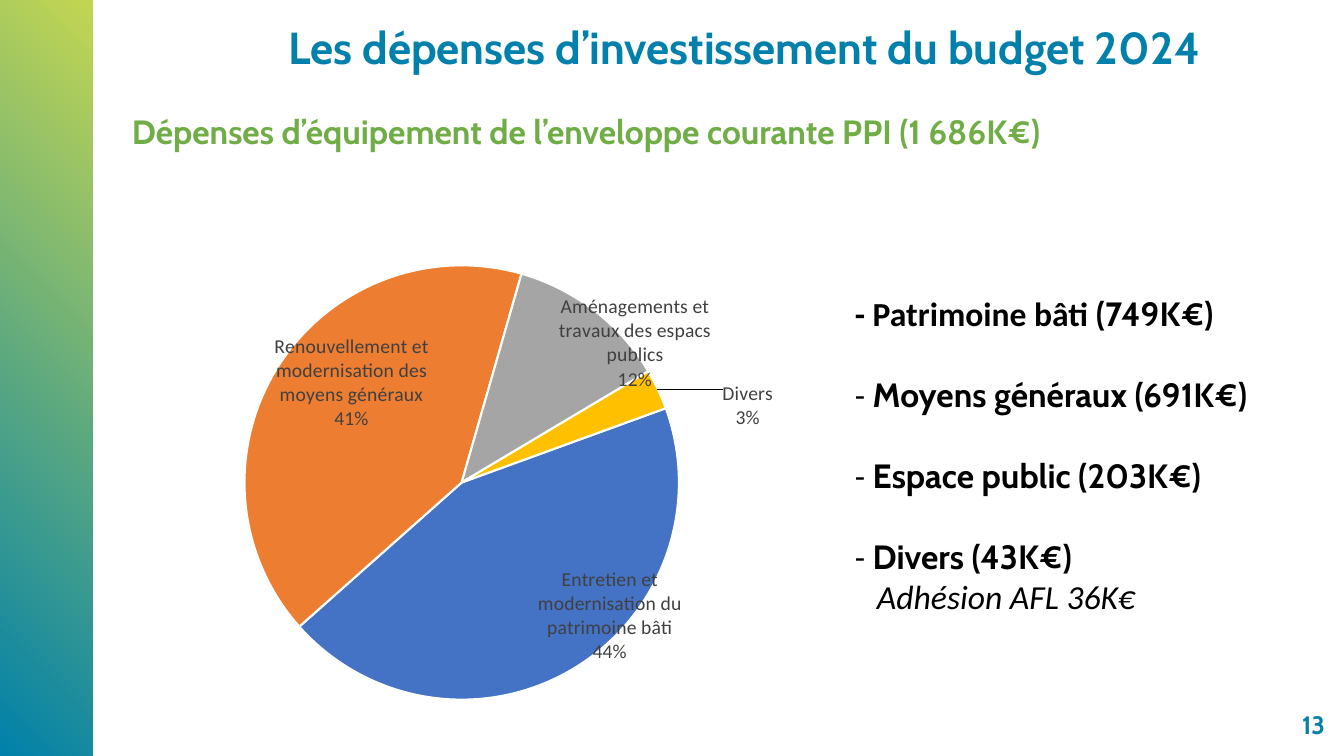
import copy
import pptx
import pptx.chart.data
import pptx.dml.color
import pptx.enum.chart
import pptx.enum.shapes
import pptx.enum.text
import pptx.oxml
import pptx.util
from pptx.util import Inches

BLUE = "0080AA"
GREEN = "70AD47"
BLACK = "000000"
CHART_XMLNS = 'xmlns:c="http://schemas.openxmlformats.org/drawingml/2006/chart"'
# name, share, colour, label shift (x, y) and label size (w, h) in parts of the chart
SLICES = [
    ("Entretien et modernisation du patrimoine bâti", 44, "4472C4", (0.13, 0), (0.16, 0.24)),
    ("Renouvellement et modernisation des moyens généraux", 41, "ED7D31",
     (-0.01, -0.07), (0.16, 0.28)),
    ("Aménagements et travaux des espacs publics", 12, "A5A5A5", (0.14, -0.04), (0.16, 0.19)),
    ("Divers", 3, "FFC000", (0.14, -0.02), (0.09, 0.1)),
]
AMOUNTS = ["Moyens généraux (691K€)", "Espace public (203K€)", "Divers (43K€)"]


def color(hex_value):
    return pptx.dml.color.RGBColor.from_string(hex_value)


def style_font(font, size, hex_value, name, bold=False, italic=False):
    font.size = pptx.util.Pt(size)
    font.color.rgb = color(hex_value)
    font.name = name
    font.bold = bold
    font.italic = italic


def add_run(para, text, size=24, hex_value=BLACK, name="Cabin", bold=True, italic=False):
    span = para.add_run()
    span.text = text
    style_font(span.font, size, hex_value, name, bold, italic)


def add_box(page, left, top, width, height, anchor=pptx.enum.text.MSO_ANCHOR.TOP):
    box = page.shapes.add_textbox(Inches(left), Inches(top), Inches(width), Inches(height))
    box.text_frame.word_wrap = True
    box.text_frame.vertical_anchor = anchor
    return box.text_frame


def add_side_band(page):
    band = page.shapes.add_shape(
        pptx.enum.shapes.MSO_SHAPE.RECTANGLE, 0, 0, Inches(0.92), Inches(7.5))
    band.shadow.inherit = False
    band.line.fill.background()
    band.fill.gradient()
    band.fill.gradient_angle = 45
    for stop, hex_value in zip(band.fill.gradient_stops, (BLUE, "C3D652")):
        stop.color.rgb = color(hex_value)


def add_headings(page):
    middle = pptx.enum.text.MSO_ANCHOR.MIDDLE
    title = add_box(page, 1.74, 0.21, 11.29, 0.58, middle).paragraphs[0]
    title.alignment = pptx.enum.text.PP_ALIGN.CENTER
    title.line_spacing = 0.9
    add_run(title, "Les dépenses d’investissement du budget 2024", 32, BLUE)

    subtitle = add_box(page, 1.21, 1.05, 9.87, 0.5).paragraphs[0]
    add_run(subtitle, "Dépenses d’équipement de l’enveloppe courante PPI (1 686K€)", 24, GREEN)

    number = add_box(page, 9.52, 6.98, 3.72, 0.41, middle).paragraphs[0]
    number.alignment = pptx.enum.text.PP_ALIGN.RIGHT
    add_run(number, "13", 18, BLUE)


def add_amounts(page):
    frame = add_box(page, 8.38, 2.86, 4.9, 3.74)
    para = frame.paragraphs[0]
    add_run(para, "- Patrimoine bâti ", name="Calibri")
    add_run(para, "(749K€)")
    for amount in AMOUNTS:
        para = frame.add_paragraph()
        para.space_before = pptx.util.Pt(29)
        add_run(para, "- ", name="Calibri", bold=False)
        add_run(para, amount)
    detail = frame.add_paragraph()
    detail._p.get_or_add_pPr().set("marL", str(Inches(0.22)))
    add_run(detail, "Adhésion AFL 36K€", name="Calibri", bold=False, italic=True)


def set_plot_area(chart, left, top, width, height):
    """Place the inner plot area, in fractions of the chart frame."""
    plot_area = chart._chartSpace.chart.plotArea
    for old in plot_area.xpath("c:layout"):
        plot_area.remove(old)
    places = "".join(
        f'<c:{tag} val="{value}"/>'
        for tag, value in (("x", left), ("y", top), ("w", width), ("h", height)))
    plot_area.insert(0, pptx.oxml.parse_xml(
        f'<c:layout {CHART_XMLNS}><c:manualLayout><c:layoutTarget val="inner"/>'
        '<c:xMode val="edge"/><c:yMode val="edge"/>'
        f'{places}</c:manualLayout></c:layout>'))


def set_start_angle(plot, degrees):
    pie = plot._element
    for old in pie.xpath("c:firstSliceAng"):
        pie.remove(old)
    pie.append(pptx.oxml.parse_xml(f'<c:firstSliceAng {CHART_XMLNS} val="{degrees}"/>'))


def slice_label(index, shift, size, text_style):
    """Build the label of one slice, moved by shift and wrapped to size."""
    label = pptx.oxml.parse_xml(
        f'<c:dLbl {CHART_XMLNS}><c:idx val="{index}"/>'
        f'<c:layout><c:manualLayout><c:x val="{shift[0]}"/><c:y val="{shift[1]}"/>'
        '</c:manualLayout></c:layout>'
        '<c:dLblPos val="inEnd"/><c:showLegendKey val="0"/><c:showVal val="0"/>'
        '<c:showCatName val="1"/><c:showSerName val="0"/><c:showPercent val="1"/>'
        '<c:showBubbleSize val="0"/><c:separator>\n</c:separator>'
        '<c:extLst><c:ext uri="{CE6537A1-D6FC-4f65-9D91-7224C49458BB}" '
        'xmlns:c15="http://schemas.microsoft.com/office/drawing/2012/chart">'
        f'<c15:layout><c:manualLayout><c:w val="{size[0]}"/><c:h val="{size[1]}"/>'
        '</c:manualLayout></c15:layout></c:ext></c:extLst></c:dLbl>')
    label.insert(2, copy.deepcopy(text_style))
    return label


def add_spending_pie(page):
    data = pptx.chart.data.CategoryChartData()
    data.categories = [name for name, *_ in SLICES]
    data.add_series("Series 1", [share for _, share, *_ in SLICES])
    chart = page.shapes.add_chart(
        pptx.enum.chart.XL_CHART_TYPE.PIE,
        Inches(-0.16), Inches(2.43), Inches(8.54), Inches(5.07), data).chart
    chart.has_title = False
    chart.has_legend = False
    style_font(chart.font, 14, BLACK, "Calibri")
    set_plot_area(chart, 0.3, 0.04, 0.51, 0.85)

    plot = chart.plots[0]
    plot.vary_by_categories = True
    set_start_angle(plot, 70)
    labels = plot.series[0].data_labels
    labels.show_category_name = True
    labels.show_percentage = True
    labels.show_value = False
    labels.position = pptx.enum.chart.XL_LABEL_POSITION.INSIDE_END
    style_font(labels.font, 14, "404040", "Calibri")
    text_style = labels._element.get_or_add_txPr()

    for index, (_, _, hex_value, shift, size) in enumerate(SLICES):
        labels._element.insert(index, slice_label(index, shift, size, text_style))
        point = plot.series[0].points[index]
        point.format.fill.solid()
        point.format.fill.fore_color.rgb = color(hex_value)
        point.format.line.color.rgb = color("FFFFFF")
        point.format.line.width = pptx.util.Pt(1.5)


def main():
    deck = pptx.Presentation()
    deck.slide_width = Inches(13.33)
    deck.slide_height = Inches(7.5)
    page = deck.slides.add_slide(deck.slide_layouts[6])
    add_side_band(page)
    add_headings(page)
    add_amounts(page)
    add_spending_pie(page)
    deck.save("out.pptx")


if __name__ == "__main__":
    main()
